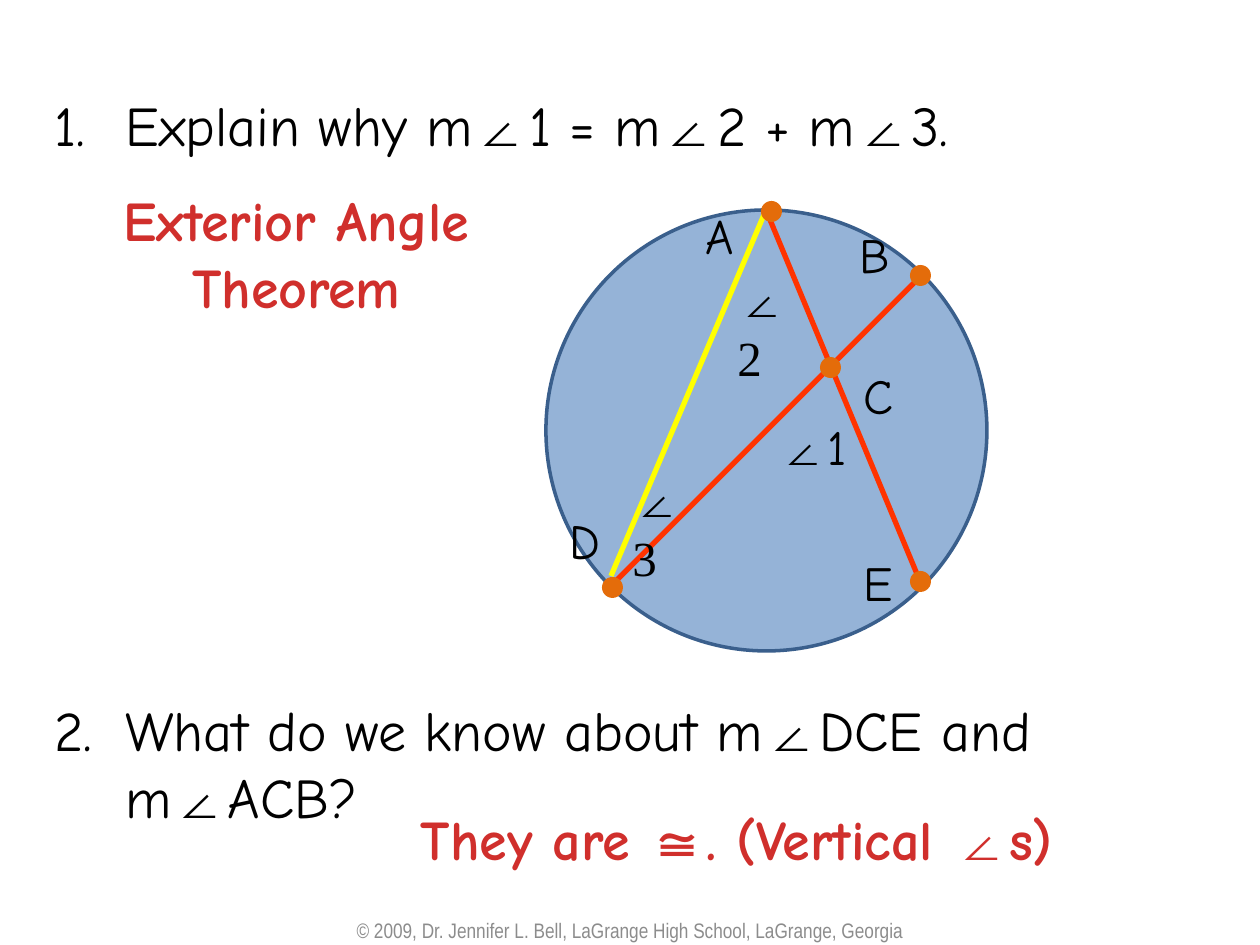
import itertools
import pptx
import pptx.util
import pptx.dml.color
import pptx.enum.shapes
import pptx.enum.text
import pptx.oxml
import pptx.oxml.ns
from lxml import etree

PX = 914400 // 126
HAND, SERIF = "Comic Neue", "Times New Roman"
RED, ORANGE = "D02F2C", "E46C0A"
qn = pptx.oxml.ns.qn
align = pptx.enum.text.PP_ALIGN
oval = pptx.enum.shapes.MSO_SHAPE.OVAL
straight = pptx.enum.shapes.MSO_CONNECTOR.STRAIGHT


def rgb(code):
    return pptx.dml.color.RGBColor.from_string(code)


def write(text, box, size=28, font=HAND, color="000000", bold=False,
          center=False, wrap=True, number=None):
    """Add a text box; the symbols ∠ and ≅ are set in the serif font."""
    shape = slide.shapes.add_textbox(*[v * PX for v in box])
    frame = shape.text_frame
    frame.word_wrap = wrap
    for i, line in enumerate(text.split("\n")):
        para = frame.add_paragraph() if i else frame.paragraphs[0]
        para.alignment = align.CENTER if center else align.LEFT
        for sign, chars in itertools.groupby(line, lambda c: c in "∠≅"):
            run = para.add_run()
            run.text = "".join(chars)
            run.font.name = SERIF if sign else font
            run.font.size = pptx.util.Pt(size)
            run.font.bold = bold
            run.font.color.rgb = rgb(color)
        if number:
            props = para._p.get_or_add_pPr()
            props.set("marL", str(71 * PX))
            props.set("indent", str(-71 * PX))
            etree.SubElement(props, qn("a:buFont"), typeface="+mj-lt")
            etree.SubElement(props, qn("a:buAutoNum"), type="arabicPeriod",
                             startAt=str(number))
    return shape


deck = pptx.Presentation()
deck.slide_width, deck.slide_height = 1260 * PX, 945 * PX
slide = deck.slides.add_slide(deck.slide_layouts[6])

# Questions
write("Explain why m∠1 = m∠2 + m∠3.", (42, 84, 1218, 80), size=32, number=1)
write("What do we know about m∠DCE and m∠ACB?", (42, 689, 1218, 147),
      size=32, number=2)

# Circle
disc = slide.shapes.add_shape(oval, 546 * PX, 210 * PX, 441 * PX, 441 * PX)
disc.shadow.inherit = False
disc.fill.solid()
disc.fill.fore_color.rgb = rgb("95B3D7")
disc.line.color.rgb = rgb("3A5F8C")
disc.line.width = pptx.util.Pt(2)

# Chords DB, EA and AD
chords = [(611, 586, 922, 275, "FF3300"),
          (922, 586, 766, 210, "FF3300"),
          (766, 210, 611, 576, "FFFF00")]
for *ends, color in chords:
    chord = slide.shapes.add_connector(straight, *[v * PX for v in ends])
    chord.line.color.rgb = rgb(color)
    chord.line.width = pptx.util.Pt(3)
    etree.SubElement(chord._element.spPr, qn("a:effectLst"))

# Points: name, dot centre, label corner
points = [("A", 771, 211, 693, 199), ("B", 920, 275, 847, 218),
          ("C", 830, 367, 851, 359), ("D", 612, 587, 557, 504),
          ("E", 920, 581, 851, 546)]
for name, x, y, left, top in points:
    dot = slide.shapes.add_shape(oval, (x - 10) * PX, (y - 10) * PX,
                                 21 * PX, 21 * PX)
    dot.shadow.inherit = False
    dot.fill.solid()
    dot.fill.fore_color.rgb = rgb(ORANGE)
    dot.line.fill.background()
    write(name, (left, top, 63, 72))

# Angles
write("∠1", (766, 410, 95, 72))
write("∠2", (725, 262, 95, 72), font=SERIF)
write("∠3", (620, 462, 95, 72), font=SERIF)

# Answers
write("Exterior Angle\nTheorem", (84, 179, 425, 152), size=32, color=RED,
      bold=True, center=True, wrap=False)
write("They are ≅. (Vertical ∠s)", (369, 798, 736, 81), size=32, color=RED,
      bold=True, center=True, wrap=False)

# Footer
foot = write("© 2009, Dr. Jennifer L. Bell, LaGrange High School, "
             "LaGrange, Georgia", (0, 914, 1260, 32), size=12,
             font="Arial Narrow", color="8C8C8C", center=True)
foot.text_frame.vertical_anchor = pptx.enum.text.MSO_ANCHOR.MIDDLE

deck.save("out.pptx")
